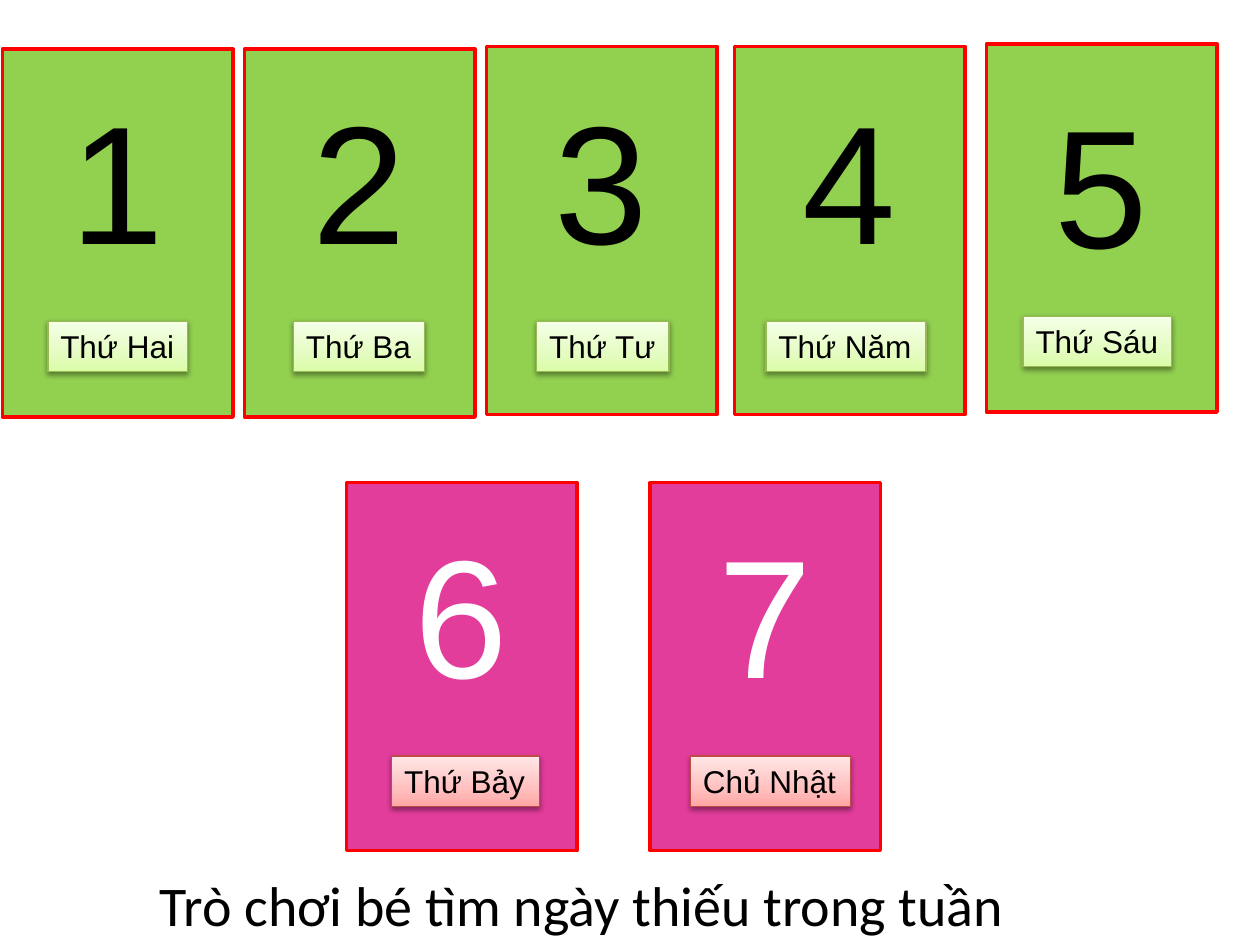
"""Build a slide of seven numbered weekday cards with a game title."""
from copy import deepcopy
from dataclasses import dataclass

from pptx import Presentation
from pptx.dml.color import RGBColor
from pptx.enum.shapes import MSO_SHAPE
from pptx.enum.text import MSO_ANCHOR, MSO_AUTO_SIZE, PP_ALIGN
from pptx.oxml import parse_xml
from pptx.oxml.ns import nsdecls, qn
from pptx.util import Inches, Pt


@dataclass(frozen=True)
class Tone:
    """Colours of one group of cards."""
    fill: str
    digit: str
    edge: str
    stops: tuple


@dataclass(frozen=True)
class Theme:
    """Colours, fonts and type sizes of the slide."""
    green: Tone = Tone("92D050", "000000", "98B955",
                       ((0, "DAFDA7"), (0.35, "E4FCC2"), (1, "F5FFE7")))
    pink: Tone = Tone("E33D9C", "FFFFFF", "BF4C48",
                      ((0, "FFA6A5"), (0.35, "FFC0BF"), (1, "FFE7E7")))
    ink: str = "000000"
    border: str = "FF0000"
    sans: str = "Arial"
    body: str = "Calibri"
    digit: int = 96
    label: int = 18
    title: int = 32


def rgb(code):
    """Turn a hex code into a colour."""
    return RGBColor.from_string(code)


def apply(target, values):
    """Set each attribute named in a dict."""
    for name, value in values.items():
        setattr(target, name, value)


class Board:
    """Draws each kind of element on the current slide."""

    def __init__(self, slide, theme):
        """Keep the slide and its theme."""
        self.slide = slide
        self.theme = theme

    def letter(self, shape, text, size, face, color, wrap=False):
        """Put one styled line of text in a shape."""
        frame = shape.text_frame
        apply(frame, {"text": text, "word_wrap": wrap,
                      "auto_size": MSO_AUTO_SIZE.SHAPE_TO_FIT_TEXT,
                      "vertical_anchor": MSO_ANCHOR.TOP})
        line = frame.paragraphs[0]
        line.alignment = PP_ALIGN.LEFT
        font = line.runs[0].font
        apply(font, {"size": Pt(size), "name": face})
        font.color.rgb = rgb(color)

    def shape(self, kind, box, edge, width):
        """Add an outlined preset shape without a shadow."""
        shape = self.slide.shapes.add_shape(kind, *map(Inches, box))
        shape.shadow.inherit = False
        shape.line.color.rgb = rgb(edge)
        shape.line.width = Pt(width)
        return shape

    def text(self, box, *style, wrap=False):
        """Add a text box."""
        shape = self.slide.shapes.add_textbox(*map(Inches, box))
        self.letter(shape, *style, wrap=wrap)

    def panel(self, left, top, tone):
        """Add the coloured back of a card."""
        shape = self.shape(MSO_SHAPE.FLOWCHART_PROCESS,
                           (left, top, 1.83, 2.92), self.theme.border, 2)
        shape.fill.solid()
        shape.fill.fore_color.rgb = rgb(tone.fill)

    def label(self, box, text, tone):
        """Add a day label with a gradient and a soft shadow."""
        shape = self.shape(MSO_SHAPE.RECTANGLE, box, tone.edge, 0.75)
        fill = shape.fill
        fill.gradient()
        fill.gradient_angle = 90
        props = shape.element.spPr
        stops = props.find(qn("a:gradFill")).find(qn("a:gsLst"))
        stops.append(deepcopy(stops[0]))
        for stop, (place, color) in zip(fill.gradient_stops, tone.stops):
            stop.position = place
            stop.color.rgb = rgb(color)
        props.find(qn("a:effectLst")).append(parse_xml(
            f'<a:outerShdw {nsdecls("a")} blurRad="{Pt(3.1)}" dist="{Pt(1.6)}" '
            'dir="5400000" rotWithShape="0"><a:srgbClr val="000000">'
            '<a:alpha val="38000"/></a:srgbClr></a:outerShdw>'))
        self.letter(shape, text, self.theme.label, self.theme.sans, self.theme.ink)

    def card(self, digit, day, tone, left, top, high, tag):
        """Add a card with its number and day label."""
        theme = self.theme
        self.panel(left, top, tone)
        self.text((left + 0.44, high, 0.95, 1.72),
                  str(digit), theme.digit, theme.sans, tone.digit)
        x, y, width = tag
        self.label((x, y, width, 0.4), day, tone)


def main():
    """Build and save the slide."""
    deck = Presentation()
    apply(deck, {"slide_width": Inches(10), "slide_height": Inches(7.5)})
    theme = Theme()
    board = Board(deck.slides.add_slide(deck.slide_layouts[6]), theme)
    green, pink = theme.green, theme.pink
    days = (
        ("Thứ Hai", green, 0.02, 0.39, 0.56, (0.38, 2.55, 1.11)),
        ("Thứ Ba", green, 1.94, 0.39, 0.56, (2.33, 2.55, 1.04)),
        ("Thứ Tư", green, 3.86, 0.37, 0.56, (4.26, 2.55, 1.05)),
        ("Thứ Năm", green, 5.83, 0.37, 0.56, (6.08, 2.55, 1.27)),
        ("Thứ Sáu", green, 7.83, 0.35, 0.59, (8.12, 2.51, 1.18)),
        ("Thứ Bảy", pink, 2.75, 3.83, 4, (3.11, 6, 1.17)),
        ("Chủ Nhật", pink, 5.16, 3.83, 4, (5.48, 6, 1.27)),
    )
    for digit, day in enumerate(days, 1):
        board.card(digit, *day)
    board.text((1.17, 6.86, 7.54, 0.64), "Trò chơi bé tìm ngày thiếu trong tuần",
               theme.title, theme.body, theme.ink, wrap=True)
    deck.save("out.pptx")


if __name__ == "__main__":
    main()
